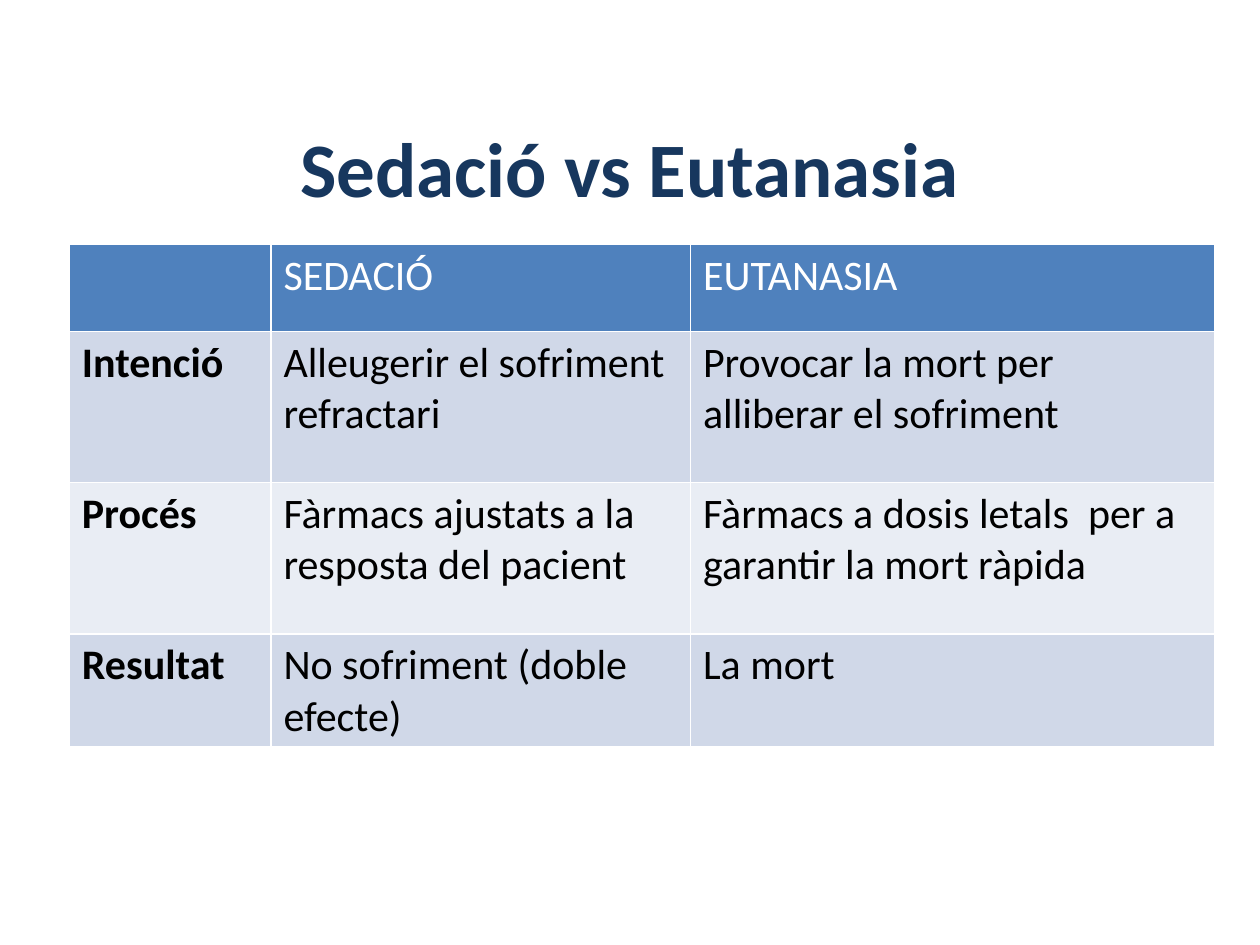
"""Build a slide with a table comparing sedation and euthanasia."""
from pptx import Presentation
from pptx import util as u
from pptx.dml.color import RGBColor
from pptx.enum import text

COLORS = {
    "title": "17375E",
    "header": "4F81BD",
    "header_text": "FFFFFF",
    "band_dark": "D0D8E8",
    "band_light": "E9EDF4",
    "body_text": "000000",
}
COLUMN_WIDTHS = (1.6, 3.33, 4.16)
ROW_HEIGHTS = (0.69, 1.2, 1.2, 0.69)
ROWS = (
    ("", "SEDACIÓ", "EUTANASIA"),
    ("Intenció", "Alleugerir el sofriment refractari",
     "Provocar la mort per alliberar el sofriment"),
    ("Procés", "Fàrmacs ajustats a la resposta del pacient",
     "Fàrmacs a dosis letals  per a garantir la mort ràpida"),
    ("Resultat", "No sofriment (doble efecte)", "La mort"),
)


def write(tf, content, size=24, color="body_text", bold=False,
          align=text.PP_ALIGN.LEFT):
    p = tf.paragraphs[0]
    p.alignment = align
    r = p.add_run()
    r.text = content
    r.font.name = "Calibri"
    r.font.size = u.Pt(size)
    r.font.bold = bold
    r.font.color.rgb = RGBColor.from_string(COLORS[color])


def add_title(s, content):
    sp = s.shapes.add_textbox(u.Inches(0.5), u.Inches(0.7),
                              u.Inches(9), u.Inches(1.25))
    tf = sp.text_frame
    tf.word_wrap = True
    tf.vertical_anchor = text.MSO_ANCHOR.MIDDLE
    write(tf, content, size=44, color="title", bold=True,
          align=text.PP_ALIGN.CENTER)


def row_fill(row):
    if row == 0:
        return "header"
    return "band_dark" if row % 2 else "band_light"


def add_comparison(s):
    frame = s.shapes.add_table(
        len(ROWS), len(COLUMN_WIDTHS), u.Inches(0.55), u.Inches(1.94),
        u.Inches(sum(COLUMN_WIDTHS)), u.Inches(sum(ROW_HEIGHTS)))
    table = frame.table
    for column, width in zip(table.columns, COLUMN_WIDTHS):
        column.width = u.Inches(width)
    for i, (height, contents) in enumerate(zip(ROW_HEIGHTS, ROWS)):
        table.rows[i].height = u.Inches(height)
        for j, content in enumerate(contents):
            cell = table.cell(i, j)
            cell.fill.solid()
            cell.fill.fore_color.rgb = RGBColor.from_string(COLORS[row_fill(i)])
            if content:
                write(cell.text_frame, content, bold=j == 0,
                      color="body_text" if i else "header_text")


def main():
    prs = Presentation()
    prs.slide_width, prs.slide_height = u.Inches(10), u.Inches(7.5)
    s = prs.slides.add_slide(prs.slide_layouts[6])
    add_title(s, "Sedació vs Eutanasia")
    add_comparison(s)
    prs.save("out.pptx")


if __name__ == "__main__":
    main()
